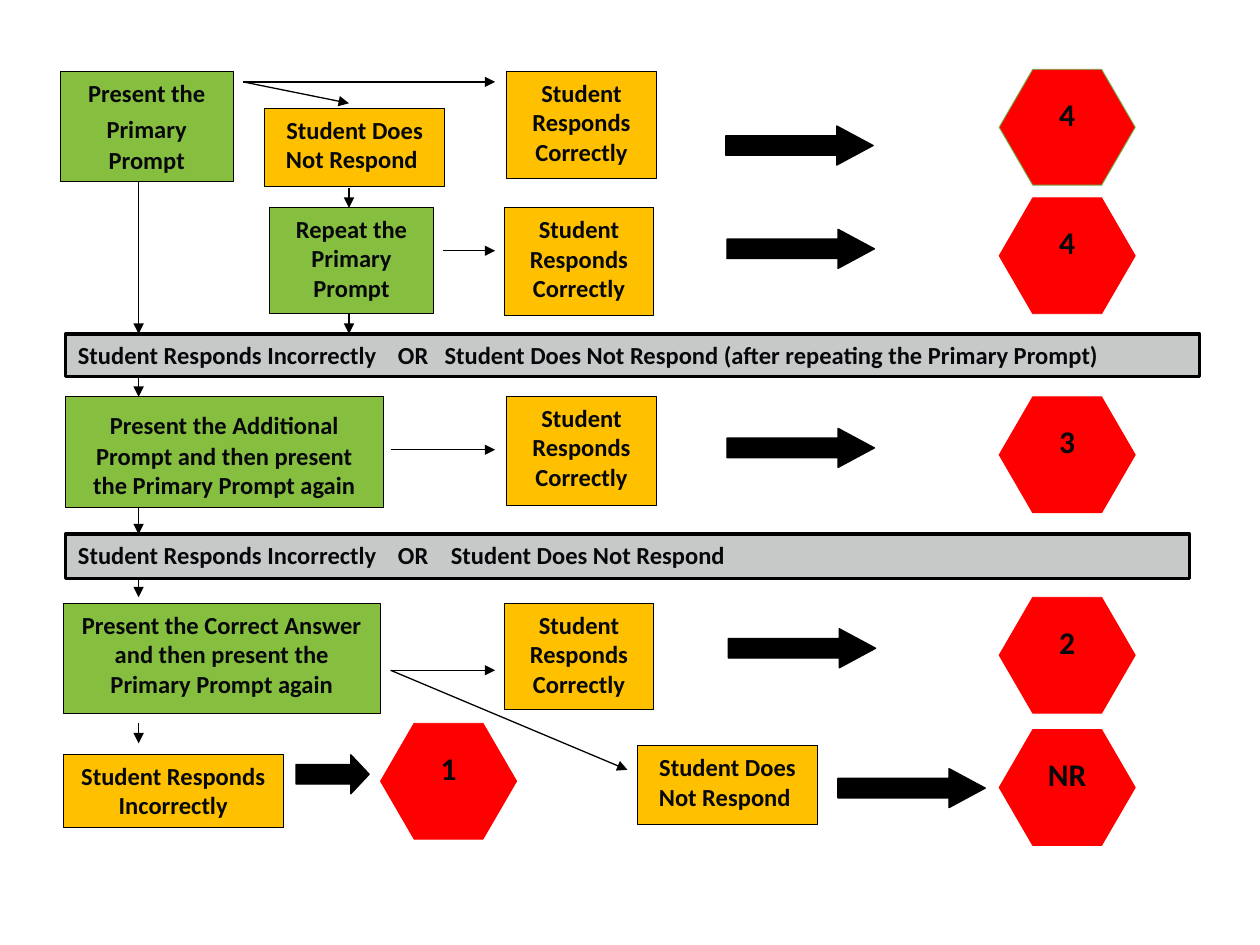
from lxml import etree
from pptx import Presentation
from pptx.dml.color import RGBColor
from pptx.enum.shapes import MSO_CONNECTOR, MSO_SHAPE
from pptx.enum.text import MSO_ANCHOR, PP_ALIGN
from pptx.oxml.ns import qn
from pptx.util import Pt

PX = 9144  # EMU in one px, at 100 px to the inch
FONT = "Calibri"
INK = RGBColor(0x07, 0x08, 0x0B)
BLACK = RGBColor(0x00, 0x00, 0x00)
GREEN = RGBColor(0x86, 0xBE, 0x40)
AMBER = RGBColor(0xFF, 0xC0, 0x00)
GRAY = RGBColor(0xC7, 0xC9, 0xC9)
RED = RGBColor(0xFF, 0x00, 0x00)
RIM_GREEN = RGBColor(0x70, 0xAD, 0x47)
RECTANGLE = MSO_SHAPE.RECTANGLE
HEXAGON = MSO_SHAPE.HEXAGON
BLOCK_ARROW = MSO_SHAPE.RIGHT_ARROW
STRAIGHT = MSO_CONNECTOR.STRAIGHT
TOP = MSO_ANCHOR.TOP
LEFT, CENTER = PP_ALIGN.LEFT, PP_ALIGN.CENTER


class FlowChart:
    """Holds the current slide and the style of its elements."""

    def __init__(self, slide):
        self.slide = slide

    def shape(self, kind, place, fill, line, weight):
        shape = self.slide.shapes.add_shape(kind, *(value * PX for value in place))
        shape.shadow.inherit = False
        shape.fill.solid()
        shape.fill.fore_color.rgb = fill
        shape.line.color.rgb = line
        shape.line.width = Pt(weight)
        return shape

    def add_text(self, shape, parts, size=14, align=CENTER):
        """Set the parts in one paragraph, joined by larger spaces."""
        frame = shape.text_frame
        frame.word_wrap = True
        frame.vertical_anchor = TOP
        para = frame.paragraphs[0]
        para.alignment = align
        for index, part in enumerate(parts):
            if index:
                self.add_span(para, " ", 18)
            self.add_span(para, part, size)
        return para

    def add_span(self, para, text, size):
        span = para.add_run()
        span.text = text
        span.font.name = FONT
        span.font.size = Pt(size)
        span.font.bold = True
        span.font.color.rgb = INK

    def step(self, place, fill, *parts):
        self.add_text(self.shape(RECTANGLE, place, fill, BLACK, 0.5), parts)

    def bar(self, place, stops, text):
        """Draw a gray bar whose text is set out on tab stops."""
        para = self.add_text(self.shape(RECTANGLE, place, GRAY, BLACK, 2), [text], align=LEFT)
        tabs = etree.SubElement(para._p.get_or_add_pPr(), qn("a:tabLst"))
        for stop in stops:
            etree.SubElement(tabs, qn("a:tab"), pos=str(stop * PX), algn="l")

    def score(self, left, top, text, rim=RED):
        hexagon = self.shape(HEXAGON, (left, top, 108, 92), RED, rim, 0.5)
        hexagon.adjustments[0] = 0.29
        self.add_text(hexagon, [text], size=18)

    def block_arrow(self, left, top, width=117, head=0.93):
        arrow = self.shape(BLOCK_ARROW, (left, top, width, 31), BLACK, BLACK, 0.75)
        arrow.adjustments[1] = head

    def thin_arrow(self, *ends):
        arrow = self.slide.shapes.add_connector(STRAIGHT, *(value * PX for value in ends))
        arrow.line.color.rgb = BLACK
        arrow.line.width = Pt(0.75)
        properties = arrow._element.spPr
        etree.SubElement(properties.find(qn("a:ln")), qn("a:tailEnd"), type="triangle")
        etree.SubElement(properties, qn("a:effectLst"))


def main():
    deck = Presentation()
    deck.slide_width = 1000 * PX
    deck.slide_height = 750 * PX
    chart = FlowChart(deck.slides.add_slide(deck.slide_layouts[6]))

    # Downward arrows in the main column, then in the repeat column
    for x, spans in (
        (110, [(140, 265), (299, 315), (399, 424), (457, 474), (574, 590)]),
        (277, [(149, 165), (249, 265)]),
    ):
        for start, end in spans:
            chart.thin_arrow(x, start, x, end)

    # Arrows to the correct responses, then the two slanted ones
    for start, y in ((193, 65), (352, 199), (310, 357), (310, 532)):
        chart.thin_arrow(start, y, 393, y)
    chart.thin_arrow(193, 65, 277, 82)
    chart.thin_arrow(310, 532, 498, 611)

    # Teacher prompts
    chart.step((48, 57, 137, 87), GREEN, "Present the Primary", "Prompt")
    chart.step((214, 165, 130, 84), GREEN, "Repeat the Primary Prompt")
    chart.step((52, 315, 252, 88), GREEN, "Present the Additional",
               "Prompt and then present the Primary Prompt again")
    chart.step((50, 479, 252, 87), GREEN,
               "Present the Correct Answer and then present the Primary Prompt again")

    # Student responses
    for left, top, height in ((402, 57, 85), (400, 165, 85), (402, 315, 86), (400, 479, 84)):
        chart.step((left, top, 119, height), AMBER, "Student Responds Correctly")
    for left, top in ((210, 86), (506, 592)):
        chart.step((left, top, 143, 62), AMBER, "Student Does Not Respond ")
    chart.step((50, 599, 175, 58), AMBER, "Student Responds Incorrectly")
    chart.bar((52, 265, 900, 34), (254, 291),
              "Student Responds Incorrectly\tOR\tStudent Does Not Respond "
              "(after repeating the Primary Prompt)")
    chart.bar((52, 424, 892, 35), (254, 296),
              "Student Responds Incorrectly\tOR\tStudent Does Not Respond")

    # Scores and the block arrows that lead to them
    for left, top in ((576, 100), (577, 182), (577, 340), (578, 499), (665, 610)):
        chart.block_arrow(left, top)
    chart.block_arrow(235, 599, width=58, head=0.47)
    chart.score(793, 55, "4", rim=RIM_GREEN)
    for left, top, text in (
        (793, 157, "4"), (793, 315, "3"), (793, 474, "2"), (793, 579, "NR"), (302, 574, "1"),
    ):
        chart.score(left, top, text)

    deck.save("out.pptx")


if __name__ == "__main__":
    main()
